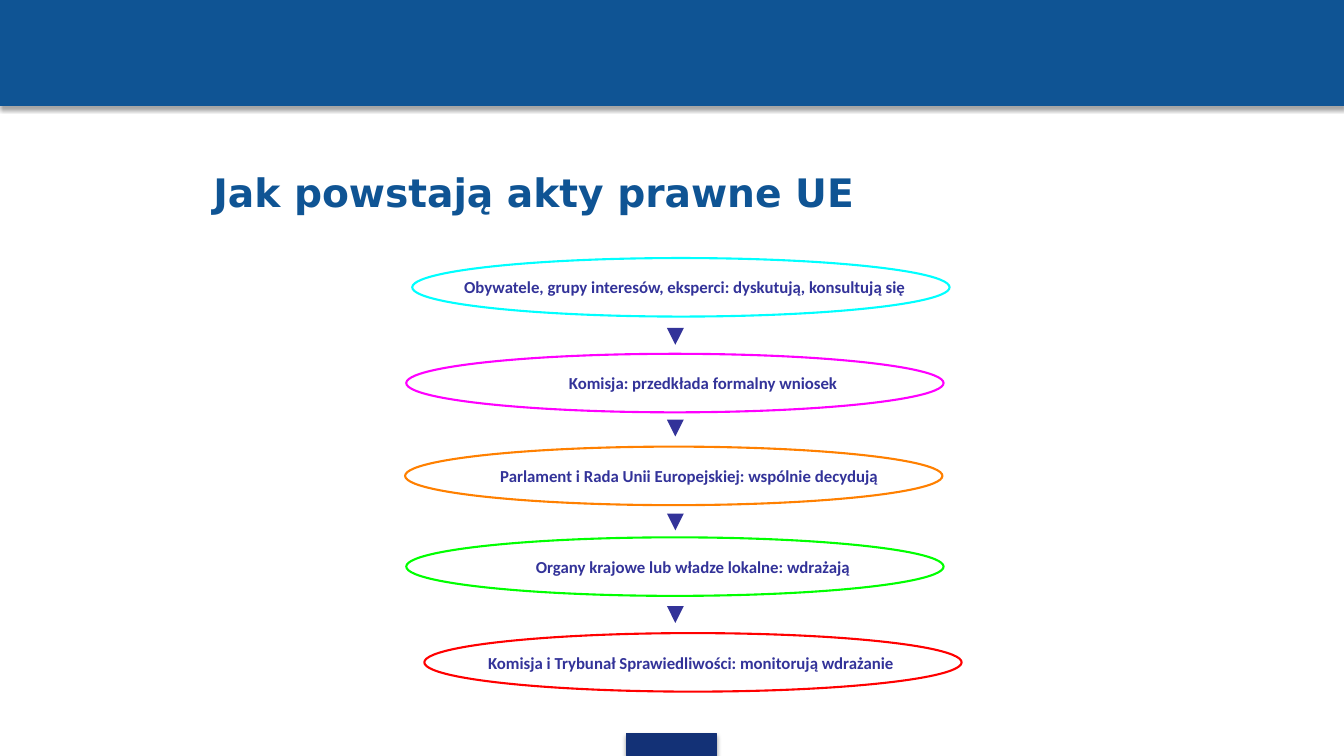
from dataclasses import dataclass
from typing import NamedTuple

from lxml.etree import SubElement
from pptx import Presentation
from pptx.dml.color import RGBColor
from pptx.enum.shapes import MSO_CONNECTOR, MSO_SHAPE
from pptx.enum.text import MSO_ANCHOR, PP_ALIGN
from pptx.oxml import parse_xml
from pptx.oxml.ns import nsdecls, qn
from pptx.util import Pt


@dataclass(frozen=True)
class Theme:
    band: str = "0F5494"
    tab: str = "133176"
    ink: str = "333399"
    paper: str = "FFFFFF"
    title_font: str = "DejaVu Sans"
    step_font: str = "Calibri"
    title_size: float = 28
    step_size: float = 12
    bar_line: float = 0.75
    oval_line: float = 1.5
    arrow_line: float = 4


class Box(NamedTuple):
    left: float
    top: float
    width: float
    height: float

    def lengths(self):
        return [Pt(value) for value in self]


class Step(NamedTuple):
    text: str
    color: str
    oval_left: float
    oval_top: float
    text_left: float


THEME = Theme()
PAGE = Box(0, 0, 960, 540)
FLOW = Box(289.4, 184.3, 397.5, 309.7)
OVAL_WIDTH, OVAL_HEIGHT = 383.8, 41.8
LABEL_WIDTH, LABEL_HEIGHT = 378, 30.2
ARROW_X, ARROW_LENGTH = 193, 5.8
ARROW_TOPS = (56.2, 121.7, 188.7, 254.9)
STEPS = (
    Step("Obywatele, grupy interesów, eksperci: dyskutują, konsultują się", "00FFFF", 5.1, 0, 10.8),
    Step("Komisja: przedkłada formalny wniosek", "FF00FF", 0.8, 68.4, 23.9),
    Step("Parlament i Rada Unii Europejskiej: wspólnie decydują", "FF8000", 0, 134.7, 13.9),
    Step("Organy krajowe lub władze lokalne: wdrażają", "00FF00", 0.8, 199.5, 16.6),
    Step("Komisja i Trybunał Sprawiedliwości: monitorują wdrażanie", "FF0000", 13.7, 267.9, 15.2),
)


def rgb(value):
    return RGBColor.from_string(value)


def add_shape(page, kind, box, fill, line, line_width):
    shape = page.shapes.add_shape(kind, *box.lengths())
    shape.shadow.inherit = False
    shape.fill.solid()
    shape.fill.fore_color.rgb = rgb(fill)
    shape.line.color.rgb = rgb(line)
    shape.line.width = Pt(line_width)
    return shape


def add_text(page, box, text, font_name, size, color, align, anchor):
    frame = page.shapes.add_textbox(*box.lengths()).text_frame
    frame.word_wrap = True
    frame.vertical_anchor = anchor
    para = frame.paragraphs[0]
    para.text = text
    para.alignment = align
    para.font.name = font_name
    para.font.size = Pt(size)
    para.font.bold = True
    para.font.color.rgb = rgb(color)


def add_bar(page, box, color):
    bar = add_shape(page, MSO_SHAPE.RECTANGLE, box, color, color, THEME.bar_line)
    effects = bar.element.spPr.find(qn("a:effectLst"))
    effects.append(parse_xml(
        f'<a:outerShdw {nsdecls("a")} blurRad="{Pt(3.1)}" dist="{Pt(1.8)}" '
        'dir="5400000" rotWithShape="0"><a:srgbClr val="000000">'
        '<a:alpha val="35000"/></a:srgbClr></a:outerShdw>'
    ))


def add_frame(page, box):
    add_bar(page, Box(box.left, box.top, box.width, 75.6), THEME.band)
    tab_top = box.top + box.height - 15.8
    add_bar(page, Box(box.left + 447.5, tab_top, 64.5, 15.8), THEME.tab)


def add_title(page, box):
    add_text(page, box, "Jak powstają akty prawne UE", THEME.title_font,
             THEME.title_size, THEME.band, PP_ALIGN.LEFT, MSO_ANCHOR.TOP)


def add_step(page, box, step):
    oval = Box(box.left + step.oval_left, box.top + step.oval_top, OVAL_WIDTH, OVAL_HEIGHT)
    add_shape(page, MSO_SHAPE.OVAL, oval, THEME.paper, step.color, THEME.oval_line)
    label_top = oval.top + (OVAL_HEIGHT - LABEL_HEIGHT) / 2
    label = Box(box.left + step.text_left, label_top, LABEL_WIDTH, LABEL_HEIGHT)
    add_text(page, label, step.text, THEME.step_font, THEME.step_size,
             THEME.ink, PP_ALIGN.CENTER, MSO_ANCHOR.MIDDLE)


def add_arrow(page, left, top):
    arrow = page.shapes.add_connector(
        MSO_CONNECTOR.STRAIGHT, Pt(left), Pt(top), Pt(left), Pt(top + ARROW_LENGTH))
    arrow.line.color.rgb = rgb(THEME.ink)
    arrow.line.width = Pt(THEME.arrow_line)
    SubElement(arrow.line._get_or_add_ln(), qn("a:tailEnd"), type="triangle")
    SubElement(arrow._element.spPr, qn("a:effectLst"))


def add_flow(page, box):
    for step in STEPS:
        add_step(page, box, step)
    for top in ARROW_TOPS:
        add_arrow(page, box.left + ARROW_X, box.top + top)


def main():
    deck = Presentation()
    deck.slide_width, deck.slide_height = Pt(PAGE.width), Pt(PAGE.height)
    page = deck.slides.add_slide(deck.slide_layouts[6])
    add_frame(page, PAGE)
    add_title(page, Box(145.4, 116.6, 578.2, 41))
    add_flow(page, FLOW)
    deck.save("out.pptx")


if __name__ == "__main__":
    main()
